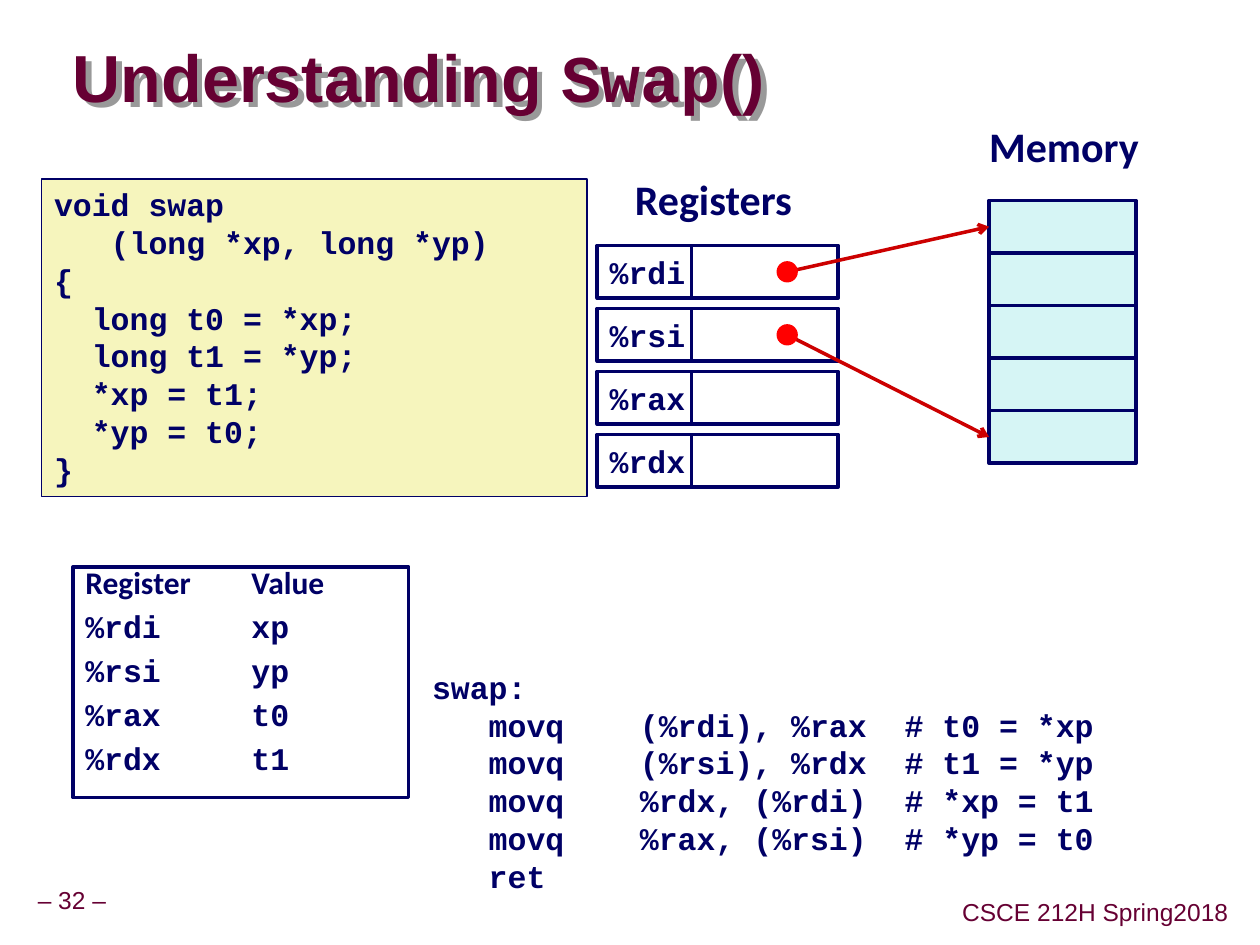
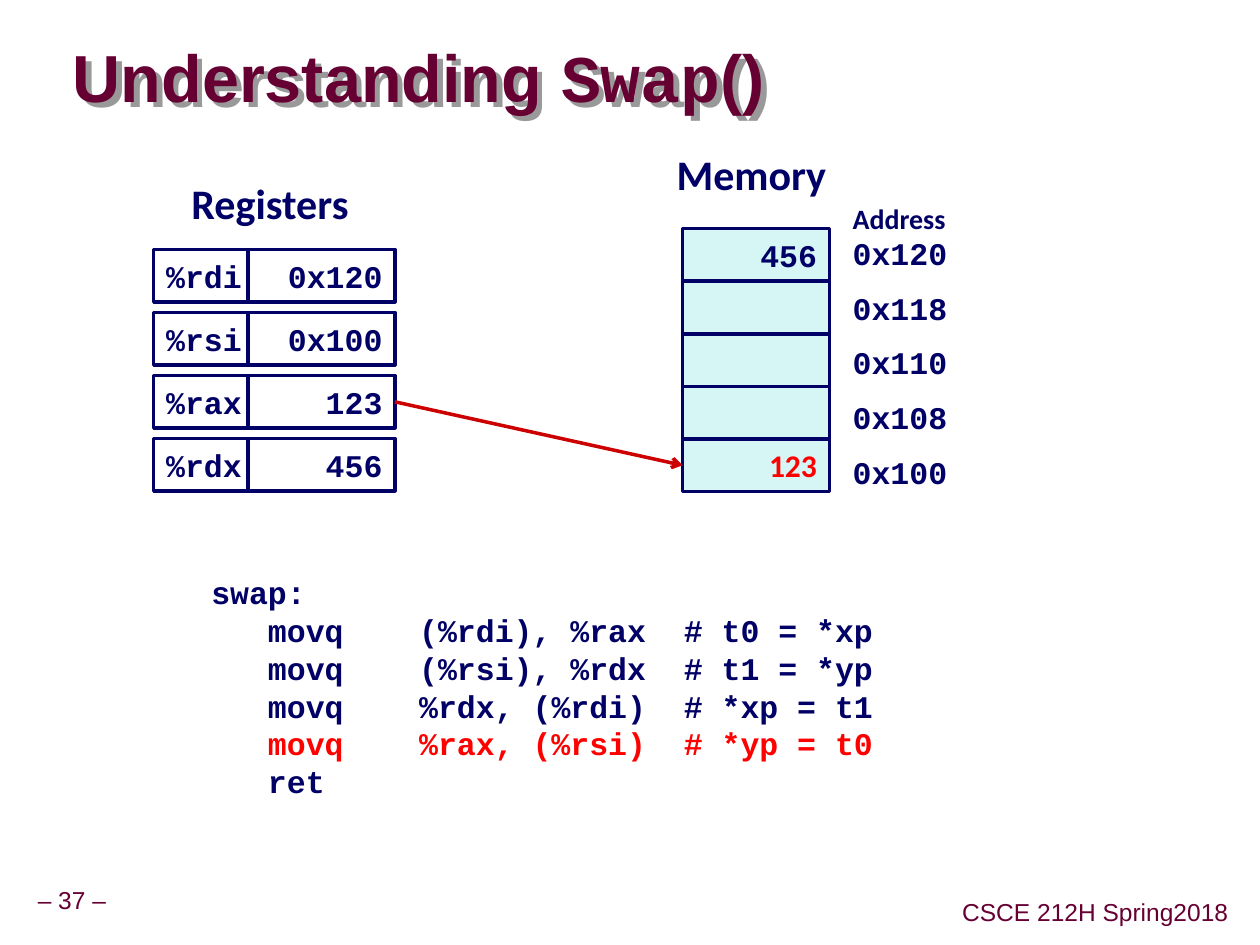
"""Build two slides that trace swap() through registers and memory."""
from dataclasses import dataclass
from typing import Any, NamedTuple, Optional, Sequence

import lxml.etree
import pptx
import pptx.dml.color
import pptx.enum.shapes
import pptx.enum.text
import pptx.oxml.ns
import pptx.util

Cm = pptx.util.Cm
Color = pptx.dml.color.RGBColor
ALIGN = pptx.enum.text.PP_ALIGN
ANCHOR = pptx.enum.text.MSO_ANCHOR
SHAPE = pptx.enum.shapes.MSO_SHAPE


@dataclass(frozen=True)
class Theme:
    navy: Color = Color.from_string("000066")
    maroon: Color = Color.from_string("660033")
    red: Color = Color.from_string("FF0000")
    arrow: Color = Color.from_string("CC0000")
    white: Color = Color.from_string("FFFFFF")
    code_fill: Color = Color.from_string("F6F5BD")
    memory_fill: Color = Color.from_string("D6F5F5")
    title_shadow: str = "999999"
    sans: str = "Arial"
    label: str = "Calibri"
    mono: str = "Courier New"
    title_size: int = 38
    heading_size: int = 24
    body_size: int = 18
    address_size: int = 16
    footer_size: int = 14


THEME = Theme()


class Area(NamedTuple):
    left: float
    top: float
    width: float
    height: float


class Span(NamedTuple):
    text: str
    font: str = THEME.mono
    size: int = THEME.body_size
    color: Color = THEME.navy
    bold: bool = True


class TextStyle(NamedTuple):
    align: Any = ALIGN.LEFT
    anchor: Any = ANCHOR.TOP
    wrap: bool = True
    inset: Optional[float] = None
    line_spacing: Optional[float] = None
    space_before: float = 0
    tab: Optional[float] = None


class Registers(NamedTuple):
    left: float
    top: float
    values: Sequence[str] = ("", "", "", "")


class Memory(NamedTuple):
    left: float
    top: float
    heading_left: float
    cells: Sequence[Optional[Span]] = (None,) * 5


CELL_HEIGHT = 1.06
NAME_WIDTH = 1.9
VALUE_WIDTH = 2.96
REGISTER_STEP = 1.27
ADDRESS_STEP = 1.1
DOT_SIZE = 0.43
DOT_OFFSET = 1.93
REGISTER_NAMES = ("%rdi", "%rsi", "%rax", "%rdx")
ADDRESSES = ("0x120", "0x118", "0x110", "0x108", "0x100")
CELL_NAME = TextStyle(anchor=ANCHOR.MIDDLE, wrap=False)
CELL_VALUE = CELL_NAME._replace(align=ALIGN.RIGHT)
UNWRAPPED = TextStyle(wrap=False)
FOOTER = TextStyle(ALIGN.CENTER, ANCHOR.MIDDLE, False, 0.13, 0.9)
SWAP_C = (
    "void swap",
    "   (long *xp, long *yp)",
    "{",
    "  long t0 = *xp;",
    "  long t1 = *yp;",
    "  *xp = t1;",
    "  *yp = t0;",
    "}",
)
SWAP_ASSEMBLY = (
    "swap:",
    "   movq    (%rdi), %rax  # t0 = *xp",
    "   movq    (%rsi), %rdx  # t1 = *yp",
    "   movq    %rdx, (%rdi)  # *xp = t1",
    "   movq    %rax, (%rsi)  # *yp = t0",
    "   ret",
)


def to_cm(area: Area) -> list:
    return [Cm(value) for value in area]


def write(box: Any, lines: Sequence[Sequence[Span]], style: TextStyle) -> None:
    frame = box.text_frame
    frame.word_wrap = style.wrap
    frame.vertical_anchor = style.anchor
    if style.inset is not None:
        frame.margin_left = frame.margin_right = Cm(style.inset)
        frame.margin_top = frame.margin_bottom = Cm(style.inset)
    for index, spans in enumerate(lines):
        para = frame.add_paragraph() if index else frame.paragraphs[0]
        if style.tab is not None:
            add_tab(para, style.tab)
        para.alignment = style.align
        if style.line_spacing is not None:
            para.line_spacing = style.line_spacing
        if index and style.space_before:
            para.space_before = pptx.util.Pt(style.space_before)
        for span in spans:
            run = para.add_run()
            run.text = span.text
            run.font.name = span.font
            run.font.size = pptx.util.Pt(span.size)
            run.font.bold = span.bold
            run.font.color.rgb = span.color


def add_child(parent: Any, tag: str, **attributes: str) -> Any:
    return lxml.etree.SubElement(parent, pptx.oxml.ns.qn(tag), **attributes)


def add_tab(para: Any, position: float) -> None:
    tabs = add_child(para._p.get_or_add_pPr(), "a:tabLst")
    add_child(tabs, "a:tab", pos=str(int(Cm(position))), algn="l")


def add_text(page: Any, area: Area, lines: Sequence[Sequence[Span]],
             style: TextStyle = TextStyle()) -> Any:
    box = page.shapes.add_textbox(*to_cm(area))
    write(box, lines, style)
    return box


def add_box(page: Any, area: Area, fill: Optional[Color], line_width: float = 2,
            kind: Any = SHAPE.RECTANGLE) -> Any:
    box = page.shapes.add_shape(kind, *to_cm(area))
    box.shadow.inherit = False
    if fill is None:
        box.fill.background()
    else:
        box.fill.solid()
        box.fill.fore_color.rgb = fill
    if line_width:
        box.line.color.rgb = THEME.navy
        box.line.width = pptx.util.Pt(line_width)
    else:
        box.line.fill.background()
    return box


def add_cell(page: Any, area: Area, fill: Color, span: Optional[Span],
             style: TextStyle = CELL_VALUE) -> Any:
    cell = add_box(page, area, fill)
    if span and span.text:
        write(cell, [[span]], style)
    return cell


def add_heading(page: Any, left: float, top: float, text: str) -> None:
    span = Span(text, THEME.label, THEME.heading_size)
    add_text(page, Area(left, top, 3.7, 1.3), [[span]], UNWRAPPED)


def add_registers(page: Any, registers: Registers) -> list:
    """Draw the register file and return its value cells."""
    add_heading(page, registers.left + 0.51, registers.top - 1.57, "Registers")
    cells = []
    for row, (name, value) in enumerate(zip(REGISTER_NAMES, registers.values)):
        top = registers.top + row * REGISTER_STEP
        add_cell(page, Area(registers.left, top, NAME_WIDTH, CELL_HEIGHT),
                 THEME.white, Span(name), CELL_NAME)
        area = Area(registers.left + NAME_WIDTH, top, VALUE_WIDTH, CELL_HEIGHT)
        cells.append(add_cell(page, area, THEME.white, Span(value)))
    return cells


def add_memory(page: Any, memory: Memory) -> list:
    add_heading(page, memory.heading_left, memory.top - 1.74, "Memory")
    return [
        add_cell(page, Area(memory.left, memory.top + row * CELL_HEIGHT,
                            VALUE_WIDTH, CELL_HEIGHT), THEME.memory_fill, span)
        for row, span in enumerate(memory.cells)
    ]


def add_addresses(page: Any, left: float, top: float) -> None:
    heading = Span("Address", THEME.label, THEME.address_size)
    add_text(page, Area(left, top - 0.66, 3.38, 0.94), [[heading]])
    for row, address in enumerate(ADDRESSES):
        area = Area(left, top + row * ADDRESS_STEP, 3.38, 1.02)
        add_text(page, area, [[Span(address)]])


def add_arrow(page: Any, left: int, top: int, target: Any) -> Any:
    """Draw an arrow from a point to the left side of the target."""
    arrow = page.shapes.add_connector(
        pptx.enum.shapes.MSO_CONNECTOR.STRAIGHT, left, top, left, top)
    arrow.end_connect(target, 1)
    arrow.line.color.rgb = THEME.arrow
    arrow.line.width = pptx.util.Pt(2)
    add_child(arrow.line._get_or_add_ln(), "a:tailEnd", type="arrow")
    add_child(arrow.element.spPr, "a:effectLst")
    return arrow


def add_pointer(page: Any, source: Any, target: Any) -> None:
    left = source.left + Cm(DOT_OFFSET)
    top = source.top + source.height // 2
    add_arrow(page, left, top, target)
    area = Area(left.cm - DOT_SIZE / 2 if hasattr(left, "cm") else
                pptx.util.Emu(left).cm - DOT_SIZE / 2,
                pptx.util.Emu(top).cm - DOT_SIZE / 2, DOT_SIZE, DOT_SIZE)
    add_box(page, area, THEME.red, 0, SHAPE.OVAL)


def add_assembly(page: Any, left: float, top: float,
                 current: Optional[int] = None) -> None:
    lines = [[Span(line)] for line in SWAP_ASSEMBLY]
    if current is not None:
        code = SWAP_ASSEMBLY[current].lstrip()
        indent = SWAP_ASSEMBLY[current][:-len(code)]
        lines[current] = [Span(indent), Span(code, color=THEME.red)]
    add_text(page, Area(left, top, 16.31, 4.85), lines)


def add_page(deck: Any, number: int) -> Any:
    """Add a blank page with the shared title and footers."""
    page = deck.slides.add_slide(deck.slide_layouts[6])
    for area, text in ((Area(0.61, 17.78, 1.68, 0.79), f"– {number} –"),
                       (Area(19.25, 18.03, 5.66, 0.79), "CSCE 212H Spring2018")):
        span = Span(text, THEME.sans, THEME.footer_size, THEME.maroon, False)
        add_text(page, area, [[span]], FOOTER)
    spans = [Span(text, font, THEME.title_size, THEME.maroon) for text, font in (
        ("Understanding ", THEME.sans), ("Swap", THEME.mono), ("()", THEME.sans))]
    title = add_text(page, Area(1.47, 0.84, 17.7, 1.6), [spans],
                     TextStyle(anchor=ANCHOR.MIDDLE, inset=0, line_spacing=0.87))
    effects = add_child(title.element.spPr, "a:effectLst")
    shadow = add_child(effects, "a:outerShdw", dist=str(int(Cm(0.15))),
                       dir="2700000", algn="ctr", rotWithShape="0")
    add_child(shadow, "a:srgbClr", val=THEME.title_shadow)
    return page


def build_overview(deck: Any) -> None:
    page = add_page(deck, 32)
    values = add_registers(page, Registers(12.04, 4.95))
    code = add_box(page, Area(0.84, 3.61, 11, 6.4), THEME.code_fill, 1)
    write(code, [[Span(line)] for line in SWAP_C], TextStyle())
    roles = add_box(page, Area(1.47, 11.43, 6.77, 4.65), None)
    rows = [[Span("Register\tValue", THEME.label)]]
    rows += [[Span(f"{name}\t{role}")]
             for name, role in zip(REGISTER_NAMES, ("xp", "yp", "t0", "t1"))]
    write(roles, rows, TextStyle(line_spacing=0.7, space_before=10, tab=3.35))
    add_assembly(page, 8.46, 13.34)
    cells = add_memory(page, Memory(19.94, 4.04, 19.69))
    add_pointer(page, values[0], cells[0])
    add_pointer(page, values[1], cells[-1])


def build_final_store(deck: Any) -> None:
    page = add_page(deck, 37)
    stored = Span("123", THEME.label, color=THEME.red)
    cells = add_memory(page, Memory(13.76, 4.61, 13.39,
                                    (Span("456"), None, None, None, stored)))
    values = add_registers(
        page, Registers(3.1, 5.03, ("0x120", "0x100", "123", "456")))
    source = values[2]
    arrow = add_arrow(page, source.left, source.top, cells[-1])
    arrow.begin_connect(source, 3)
    add_assembly(page, 4.01, 11.43, current=4)
    add_addresses(page, 16.94, 4.6)


def main() -> None:
    deck = pptx.Presentation()
    deck.slide_width, deck.slide_height = Cm(25.4), Cm(19.05)
    build_overview(deck)
    build_final_store(deck)
    deck.save("out.pptx")


if __name__ == "__main__":
    main()
